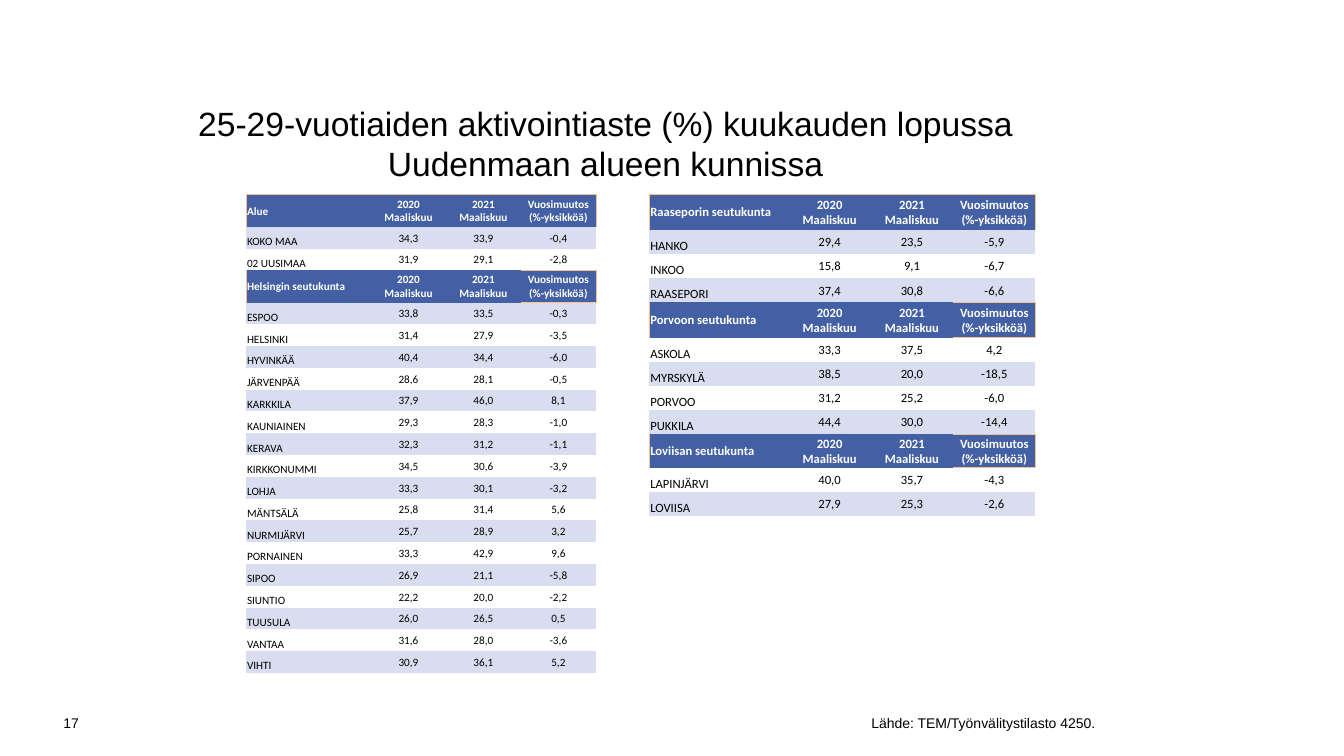
from dataclasses import dataclass

from lxml.etree import SubElement
from pptx import Presentation
from pptx.dml.color import RGBColor
from pptx.enum.text import MSO_ANCHOR, PP_ALIGN
from pptx.oxml.ns import qn
from pptx.slide import Slide
from pptx.table import _Cell
from pptx.text.text import _Paragraph
from pptx.util import Inches, Pt

COLORS = {
    "head": "4460A5",
    "band": "D8DEEF",
    "white": "FFFFFF",
    "black": "000000",
    "peach": "FABF8F",
    "sand": "FAC090",
}
HEADS = ["2020 Maaliskuu", "2021 Maaliskuu", "Vuosimuutos (%-yksikköä)"]
PLAIN = "{2D5ABB26-0587-4C30-8999-92F81FD0307C}"  # table style without grid


@dataclass
class Group:
    name: str
    tall: float
    rows: list[tuple[str, str, str, str]]


@dataclass
class Grid:
    left: float
    top: float
    width: float
    height: float
    first: float
    size: int
    edge: str
    groups: list[Group]


@dataclass
class Label:
    text: str
    left: float
    top: float
    width: float
    height: float
    size: int
    align: PP_ALIGN


LABELS = [
    Label("Lähde: TEM/Työnvälitystilasto 4250.", 1.19, 6.97, 9.77, 0.4, 10, PP_ALIGN.RIGHT),
    Label("17", 0.3, 6.98, 0.58, 0.39, 10, PP_ALIGN.RIGHT),
    Label("25-29-vuotiaiden aktivointiaste (%) kuukauden lopussa\vUudenmaan alueen kunnissa",
          1.04, 0.98, 9.93, 0.88, 24, PP_ALIGN.CENTER),
]

GRIDS = [
    Grid(2.44, 1.93, 3.47, 4.75, 1.24, 8, "peach", [
        Group("Alue", 0.32, [
            ("KOKO MAA", "34,3", "33,9", "-0,4"),
            ("02 UUSIMAA", "31,9", "29,1", "-2,8"),
        ]),
        Group("Helsingin seutukunta", 0.32, [
            ("ESPOO", "33,8", "33,5", "-0,3"),
            ("HELSINKI", "31,4", "27,9", "-3,5"),
            ("HYVINKÄÄ", "40,4", "34,4", "-6,0"),
            ("JÄRVENPÄÄ", "28,6", "28,1", "-0,5"),
            ("KARKKILA", "37,9", "46,0", "8,1"),
            ("KAUNIAINEN", "29,3", "28,3", "-1,0"),
            ("KERAVA", "32,3", "31,2", "-1,1"),
            ("KIRKKONUMMI", "34,5", "30,6", "-3,9"),
            ("LOHJA", "33,3", "30,1", "-3,2"),
            ("MÄNTSÄLÄ", "25,8", "31,4", "5,6"),
            ("NURMIJÄRVI", "25,7", "28,9", "3,2"),
            ("PORNAINEN", "33,3", "42,9", "9,6"),
            ("SIPOO", "26,9", "21,1", "-5,8"),
            ("SIUNTIO", "22,2", "20,0", "-2,2"),
            ("TUUSULA", "26,0", "26,5", "0,5"),
            ("VANTAA", "31,6", "28,0", "-3,6"),
            ("VIHTI", "30,9", "36,1", "5,2"),
        ]),
    ]),
    Grid(6.44, 1.93, 3.83, 3.19, 1.38, 9, "sand", [
        Group("Raaseporin seutukunta", 0.35, [
            ("HANKO", "29,4", "23,5", "-5,9"),
            ("INKOO", "15,8", "9,1", "-6,7"),
            ("RAASEPORI", "37,4", "30,8", "-6,6"),
        ]),
        Group("Porvoon seutukunta", 0.35, [
            ("ASKOLA", "33,3", "37,5", "4,2"),
            ("MYRSKYLÄ", "38,5", "20,0", "-18,5"),
            ("PORVOO", "31,2", "25,2", "-6,0"),
            ("PUKKILA", "44,4", "30,0", "-14,4"),
        ]),
        Group("Loviisan seutukunta", 0.33, [
            ("LAPINJÄRVI", "40,0", "35,7", "-4,3"),
            ("LOVIISA", "27,9", "25,3", "-2,6"),
        ]),
    ]),
]


def style(para: _Paragraph, font: str, size: int, color: str, bold: bool = False) -> None:
    para.font.name = font
    para.font.size = Pt(size)
    para.font.bold = bold
    para.font.color.rgb = RGBColor.from_string(COLORS[color])


def add_label(slide: Slide, label: Label) -> None:
    box = slide.shapes.add_textbox(Inches(label.left), Inches(label.top),
                                   Inches(label.width), Inches(label.height))
    frame = box.text_frame
    frame.word_wrap = True
    frame.vertical_anchor = MSO_ANCHOR.MIDDLE
    para = frame.paragraphs[0]
    para.text = label.text
    para.alignment = label.align
    style(para, "Arial", label.size, "black")


def add_edge(cell: _Cell, side: str, color: str) -> None:
    props = cell._tc.get_or_add_tcPr()
    line = SubElement(props, qn(f"a:ln{side}"), w=str(Pt(0.5)))
    fill = SubElement(line, qn("a:solidFill"))
    SubElement(fill, qn("a:srgbClr"), val=COLORS[color])


def fill_cell(cell: _Cell, text: str, col: int, size: int, head: bool, band: bool) -> None:
    cell.margin_left = cell.margin_right = cell.margin_top = Inches(0.01)
    cell.margin_bottom = 0
    low = col == 0 and not head
    cell.vertical_anchor = MSO_ANCHOR.BOTTOM if low else MSO_ANCHOR.MIDDLE
    if head or band:
        cell.fill.solid()
        cell.fill.fore_color.rgb = RGBColor.from_string(COLORS["head" if head else "band"])
    else:
        cell.fill.background()
    para = cell.text_frame.paragraphs[0]
    para.text = text
    para.alignment = PP_ALIGN.CENTER if col else PP_ALIGN.LEFT
    style(para, "Calibri", size, "white" if head else "black", head)


def add_grid(slide: Slide, grid: Grid) -> None:
    count = sum(len(group.rows) for group in grid.groups)
    body = (grid.height - sum(group.tall for group in grid.groups)) / count
    frame = slide.shapes.add_table(count + len(grid.groups), 4, Inches(grid.left),
                                   Inches(grid.top), Inches(grid.width), Inches(grid.height))
    table = frame.table
    table.first_row = table.horz_banding = False
    table._tbl.tblPr.find(qn("a:tableStyleId")).text = PLAIN
    for col, part in enumerate(table.columns):
        part.width = Inches(grid.first if col == 0 else (grid.width - grid.first) / 3)

    row = 0
    band = False
    for group in grid.groups:
        last = row + len(group.rows)
        for texts in [(group.name, *HEADS), *group.rows]:
            head = texts[1] == HEADS[0]
            # Bands alternate over body rows, passing by the headings
            band = band if head else not band
            table.rows[row].height = Inches(group.tall if head else body)
            for col, text in enumerate(texts):
                cell = table.cell(row, col)
                # Edges go in the order left, right, top, bottom
                if head and col == 0:
                    add_edge(cell, "L", grid.edge)
                if head and col == 3:
                    add_edge(cell, "R", "sand")
                if head and (row == 0 or col == 3):
                    add_edge(cell, "T", "sand" if col == 3 else grid.edge)
                if row == last and col == 3 and group is not grid.groups[-1]:
                    add_edge(cell, "B", "sand")
                fill_cell(cell, text, col, grid.size, head, band)
            row += 1


def main() -> None:
    deck = Presentation()
    deck.slide_width = Inches(13.33)
    deck.slide_height = Inches(7.5)
    slide = deck.slides.add_slide(deck.slide_layouts[6])
    # Title, source and page number
    for label in LABELS:
        add_label(slide, label)
    # Tables of regions
    for grid in GRIDS:
        add_grid(slide, grid)
    deck.save("out.pptx")


if __name__ == "__main__":
    main()
